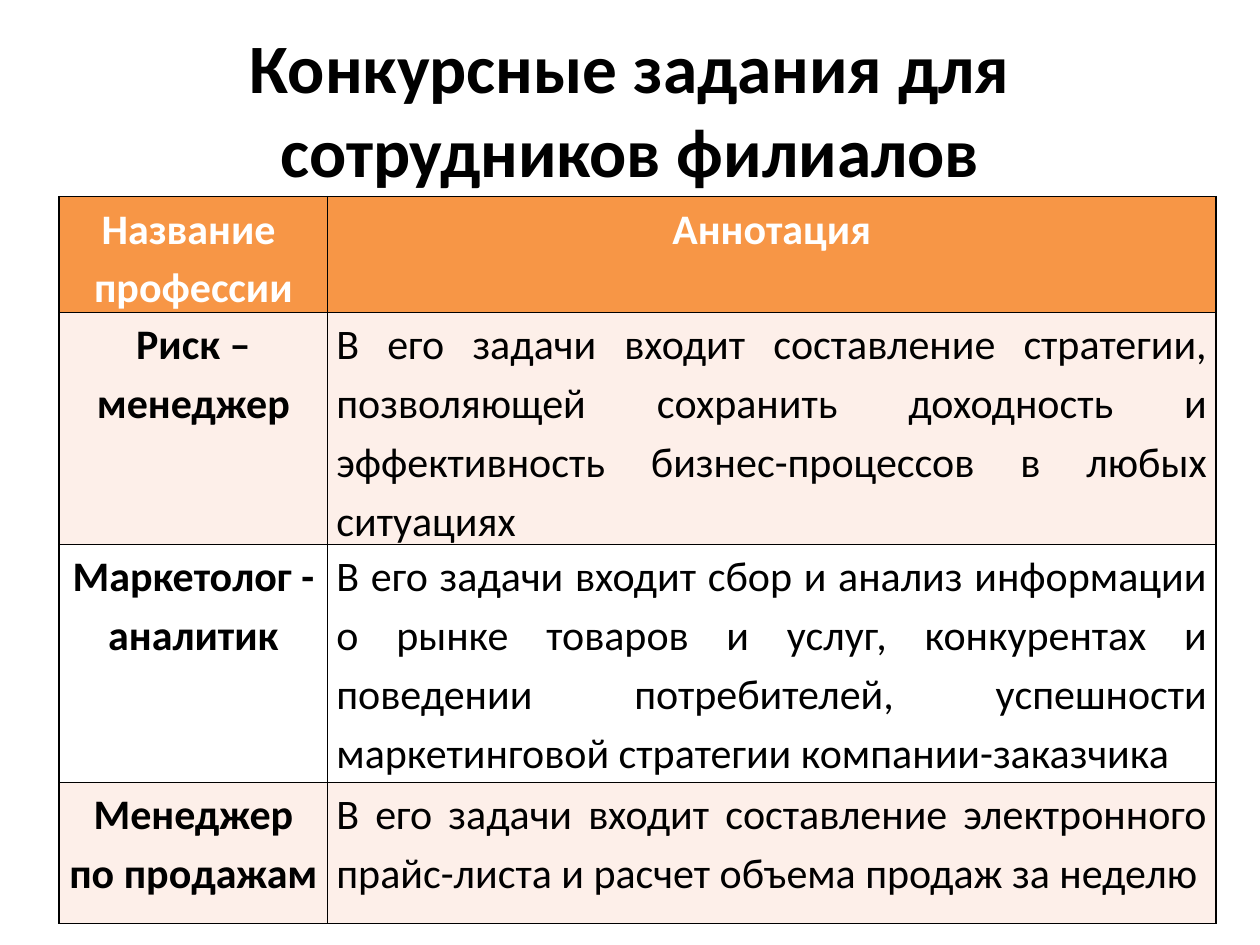
"""Builds the slide on competition tasks for branch staff."""
from lxml import etree
from pptx import Presentation
from pptx import util as u
from pptx.dml.color import RGBColor
from pptx.enum import text
from pptx.oxml.ns import qn

COLORS = {
    "ink": "000000",
    "white": "FFFFFF",
    "header": "F79646",
    "band": "FDEFE9",
}
TITLE = "Конкурсные задания для сотрудников филиалов"
HEADER = ("Название \nпрофессии", "Аннотация")
PROFESSIONS = [
    ("Риск –\nменеджер",
     "В его задачи входит составление стратегии, позволяющей сохранить "
     "доходность и эффективность бизнес-процессов в любых ситуациях"),
    ("Маркетолог - аналитик",
     "В его задачи входит сбор и анализ информации о рынке товаров и услуг, "
     "конкурентах и поведении потребителей, успешности маркетинговой "
     "стратегии компании-заказчика"),
    ("Менеджер по продажам",
     "В его задачи входит составление электронного прайс-листа и расчет "
     "объема продаж за неделю"),
]
COLUMN_WIDTHS = (2.13, 7.05)
ROW_HEIGHTS = (0.79, 1.66, 1.89, 1.12)


def rgb(name):
    return RGBColor.from_string(COLORS[name])


def set_values(target, values):
    for name, value in values.items():
        setattr(target, name, value)


def write(frame, content, color, font, paragraph_format):
    frame.text = content
    for paragraph in frame.paragraphs:
        set_values(paragraph, paragraph_format)
        for run in paragraph.runs:
            set_values(run.font, {"name": "Calibri", **font})
            run.font.color.rgb = rgb(color)


def add_title(slide):
    title = slide.shapes.add_textbox(
        u.Inches(0.5), u.Inches(0.3), u.Inches(9), u.Inches(1.11))
    set_values(title.text_frame, {
        "word_wrap": True, "vertical_anchor": text.MSO_ANCHOR.MIDDLE})
    write(title.text_frame, TITLE, "ink",
          {"size": u.Pt(39.6), "bold": True},
          {"alignment": text.PP_ALIGN.CENTER})


def add_borders(cell):
    properties = cell._tc.get_or_add_tcPr()
    for index, side in enumerate(("lnL", "lnR", "lnT", "lnB")):
        line = etree.Element(qn(f"a:{side}"), w=str(u.Pt(1)))
        fill = etree.SubElement(line, qn("a:solidFill"))
        etree.SubElement(fill, qn("a:srgbClr"), val=COLORS["ink"])
        properties.insert(index, line)


def fill_cell(cell, content, background, color, bold, alignment):
    set_values(cell, {
        "margin_left": u.Inches(0.07), "margin_right": u.Inches(0.07),
        "margin_top": 0, "margin_bottom": 0})
    cell.fill.solid()
    cell.fill.fore_color.rgb = rgb(background)
    add_borders(cell)
    write(cell.text_frame, content, color,
          {"size": u.Pt(24), "bold": bold},
          {"alignment": alignment, "line_spacing": 1.15})


def add_profession_table(slide):
    table = slide.shapes.add_table(
        len(ROW_HEIGHTS), len(COLUMN_WIDTHS), u.Inches(0.47), u.Inches(1.56),
        u.Inches(sum(COLUMN_WIDTHS)), u.Inches(sum(ROW_HEIGHTS))).table
    for column, width in zip(table.columns, COLUMN_WIDTHS):
        column.width = u.Inches(width)
    for row, height in zip(table.rows, ROW_HEIGHTS):
        row.height = u.Inches(height)

    center, justify = text.PP_ALIGN.CENTER, text.PP_ALIGN.JUSTIFY
    for column, heading in enumerate(HEADER):
        fill_cell(table.cell(0, column), heading, "header", "white", True, center)
    for row, (profession, summary) in enumerate(PROFESSIONS, start=1):
        background = "band" if row % 2 else "white"
        fill_cell(table.cell(row, 0), profession, background, "ink", True, center)
        fill_cell(table.cell(row, 1), summary, background, "ink", False, justify)


def main():
    presentation = Presentation()
    set_values(presentation, {
        "slide_width": u.Inches(10), "slide_height": u.Inches(7.5)})
    slide = presentation.slides.add_slide(presentation.slide_layouts[6])
    add_title(slide)
    add_profession_table(slide)
    presentation.save("out.pptx")


if __name__ == "__main__":
    main()
